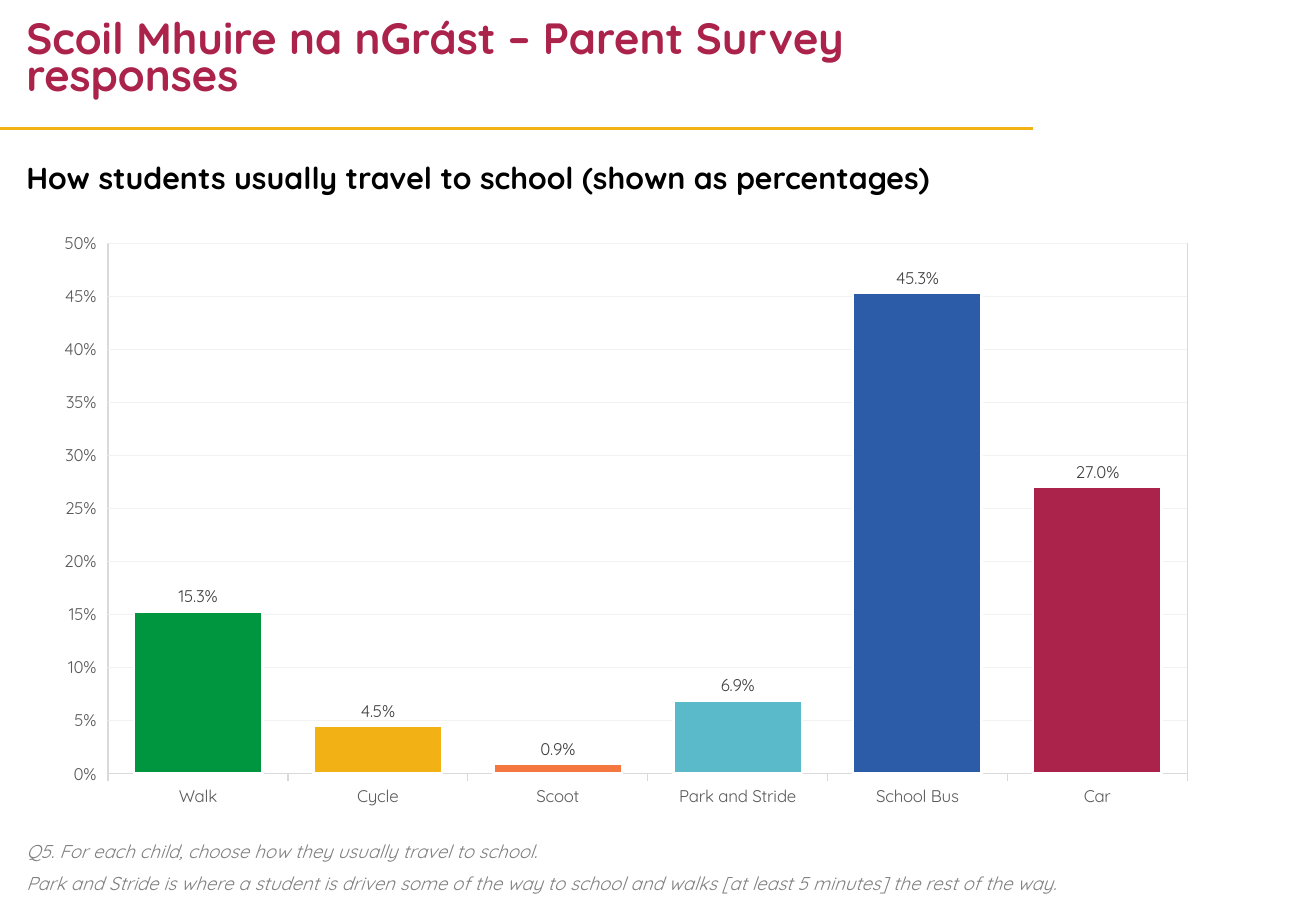
import dataclasses

import lxml.etree
import pptx
import pptx.chart.data
import pptx.dml.color
import pptx.enum.chart
import pptx.enum.shapes
import pptx.enum.text
import pptx.oxml
import pptx.oxml.ns
import pptx.util

Cm = pptx.util.Cm
Pt = pptx.util.Pt
qn = pptx.oxml.ns.qn


@dataclasses.dataclass(frozen=True)
class Theme:
    font: str = "Quicksand"
    title: str = "AB224A"
    rule: str = "F2B114"
    heading: str = "000000"
    note: str = "808080"
    axis_text: str = "595959"
    label_text: str = "404040"
    axis_line: str = "D9D9D9"
    grid: str = "F2F2F2"
    bar_edge: str = "FFFFFF"
    title_size: float = 25.9
    heading_size: float = 18
    note_size: float = 11
    chart_size: float = 10


THEME = Theme()

TRAVEL = [
    ("Walk", 0.153, "009640"),
    ("Cycle", 0.045, "F2B114"),
    ("Scoot", 0.009, "F3773F"),
    ("Park and Stride", 0.069, "5ABACA"),
    ("School Bus", 0.453, "2C5CA8"),
    ("Car", 0.27, "AB224A"),
]


def rgb(value):
    return pptx.dml.color.RGBColor.from_string(value)


def apply(target, formats):
    for name, value in formats.items():
        setattr(target, name, value)


def style_font(font, size, color, **extra):
    apply(font, {"name": THEME.font, "size": Pt(size), **extra})
    font.color.rgb = rgb(color)


def style_line(line, color, width=0.75):
    line.color.rgb = rgb(color)
    line.width = Pt(width)


def add_text(slide, box, lines, size, color, wrap=True, spacing=None, **extra):
    left, top, width, height = box
    tf = slide.shapes.add_textbox(Cm(left), Cm(top), Cm(width), Cm(height)).text_frame
    apply(tf, {"word_wrap": wrap, "vertical_anchor": pptx.enum.text.MSO_ANCHOR.MIDDLE})
    for i, line in enumerate(lines):
        p = tf.paragraphs[0] if i == 0 else tf.add_paragraph()
        apply(p, spacing or {})
        r = p.add_run()
        r.text = line
        style_font(r.font, size, color, **extra)


def add_header(slide, box):
    """Place the title, with the rule under it running from the slide's left edge."""
    left, top, width, height = box
    rule_y = Cm(top + height + 0.38)
    rule = slide.shapes.add_connector(
        pptx.enum.shapes.MSO_CONNECTOR.STRAIGHT, 0, rule_y, Cm(left + width + 0.08), rule_y)
    style_line(rule.line, THEME.rule, 2.25)
    lxml.etree.SubElement(rule.element.spPr, qn("a:effectLst"))
    add_text(slide, box, ["Scoil Mhuire na nGrást – Parent Survey responses"],
             THEME.title_size, THEME.title, spacing={"line_spacing": 0.7}, bold=True)


def add_heading(slide, box):
    add_text(slide, box, ["How students usually travel to school (shown as percentages)"],
             THEME.heading_size, THEME.heading, bold=True)


def frame_plot(chart, x, y, w, h):
    """Fix the inner plot area, as fractions of the chart, and outline it."""
    plot_area = chart.element.find(".//" + qn("c:plotArea"))
    for old in plot_area.findall(qn("c:layout")):
        plot_area.remove(old)
    ns = pptx.oxml.ns.nsdecls("c", "a")
    plot_area.insert(0, pptx.oxml.parse_xml(
        f'<c:layout {ns}><c:manualLayout><c:layoutTarget val="inner"/>'
        '<c:xMode val="edge"/><c:yMode val="edge"/>'
        f'<c:x val="{x}"/><c:y val="{y}"/><c:w val="{w}"/><c:h val="{h}"/>'
        '</c:manualLayout></c:layout>'))
    plot_area.append(pptx.oxml.parse_xml(
        f'<c:spPr {ns}><a:noFill/><a:ln w="9525"><a:solidFill>'
        f'<a:srgbClr val="{THEME.axis_line}"/></a:solidFill></a:ln></c:spPr>'))


def add_travel_chart(slide, box):
    left, top, width, height = box
    names, values, colors = zip(*TRAVEL)
    data = pptx.chart.data.CategoryChartData(number_format="0.0%")
    data.categories = names
    data.add_series("Series 1", values)
    chart = slide.shapes.add_chart(
        pptx.enum.chart.XL_CHART_TYPE.COLUMN_CLUSTERED,
        Cm(left), Cm(top), Cm(width), Cm(height), data).chart
    apply(chart, {"has_legend": False, "has_title": False})
    style_font(chart.font, THEME.chart_size, THEME.heading)
    frame_plot(chart, 0.04, 0.05, 0.94, 0.87)

    outside = pptx.enum.chart.XL_TICK_MARK.OUTSIDE
    for axis in (chart.category_axis, chart.value_axis):
        axis.major_tick_mark = outside
        style_font(axis.tick_labels.font, THEME.chart_size, THEME.axis_text)
    chart.category_axis.has_major_gridlines = False
    style_line(chart.category_axis.format.line, THEME.axis_line)
    value_axis = chart.value_axis
    apply(value_axis, {"minimum_scale": 0, "maximum_scale": 0.5, "major_unit": 0.05,
                       "has_major_gridlines": True})
    apply(value_axis.tick_labels, {"number_format": "0%", "number_format_is_linked": False})
    value_axis.format.line.fill.background()
    style_line(value_axis.major_gridlines.format.line, THEME.grid)

    plot = chart.plots[0]
    apply(plot, {"gap_width": 40, "vary_by_categories": False, "has_data_labels": True})
    apply(plot.data_labels, {
        "show_value": True, "number_format": "0.0%", "number_format_is_linked": False,
        "position": pptx.enum.chart.XL_LABEL_POSITION.OUTSIDE_END})
    style_font(plot.data_labels.font, THEME.chart_size, THEME.label_text)
    for i, color in enumerate(colors):
        bar = plot.series[0].points[i].format
        bar.fill.solid()
        bar.fill.fore_color.rgb = rgb(color)
        style_line(bar.line, THEME.bar_edge, 1.5)


def add_notes_line(slide, box):
    """Place the survey question and its explanation under the chart."""
    add_text(slide, box, [
        "Q5. For each child, choose how they usually travel to school.",
        "Park and Stride is where a student is driven some of the way to school "
        "and walks [at least 5 minutes] the rest of the way.",
    ], THEME.note_size, THEME.note, wrap=False, spacing={"space_after": Pt(6)}, italic=True)


def main():
    prs = pptx.Presentation()
    apply(prs, {"slide_width": Cm(27.51), "slide_height": Cm(19.05)})
    slide = prs.slides.add_slide(prs.slide_layouts[6])
    add_header(slide, (0.3, 0.3, 21.21, 2.01))
    add_heading(slide, (0.3, 3.2, 25, 1.02))
    add_notes_line(slide, (0.3, 17.42, 23.44, 1.42))
    add_travel_chart(slide, (1.3, 4.45, 24, 12.75))
    prs.save("out.pptx")


if __name__ == "__main__":
    main()
